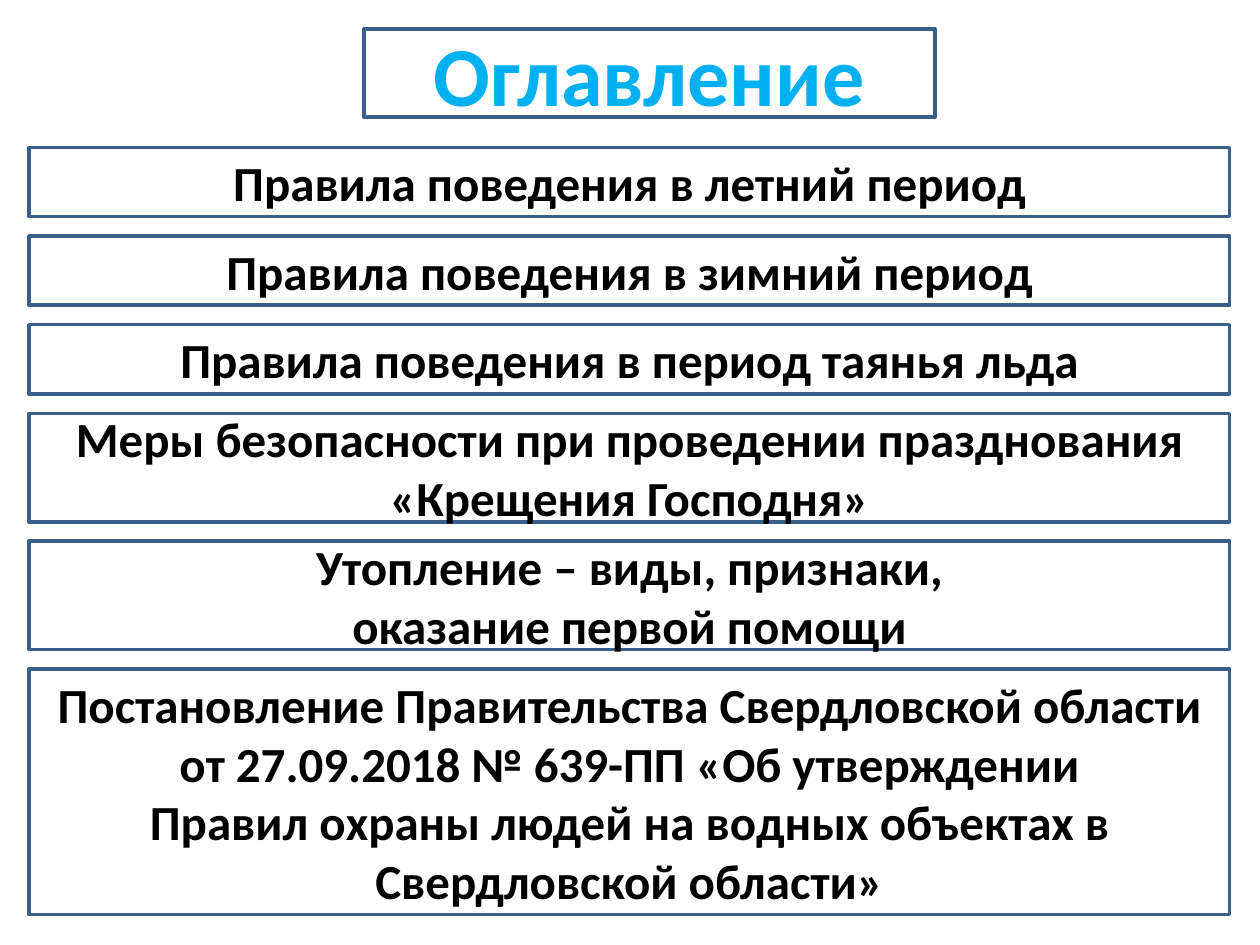
from pptx import Presentation
from pptx.dml.color import RGBColor
from pptx.enum.shapes import MSO_SHAPE
from pptx.enum.text import MSO_ANCHOR, PP_ALIGN
from pptx.util import Inches, Pt

RECTANGLE = MSO_SHAPE.RECTANGLE
MIDDLE = MSO_ANCHOR.MIDDLE
CENTER = PP_ALIGN.CENTER

WHITE = RGBColor(0xFF, 0xFF, 0xFF)
BLACK = RGBColor(0x00, 0x00, 0x00)
SKY_BLUE = RGBColor(0x00, 0xB0, 0xF0)
BORDER_BLUE = RGBColor(0x3A, 0x5F, 0x8C)

SLIDE_WIDTH, SLIDE_HEIGHT = Inches(10), Inches(7.5)
TITLE_BOX = (28.9, 3.07, 45.3, 9.33)
LIST_LEFT, LIST_WIDTH = 2.3, 95.3
LIST_TOP, LIST_BOTTOM = 15.6, 96.8
ONE_LINE, TWO_LINES, FOUR_LINES = 7.33, 11.47, 26

CONTENTS = [
    ("Правила поведения в летний период", ONE_LINE),
    ("Правила поведения в зимний период", ONE_LINE),
    ("Правила поведения в период таянья льда", ONE_LINE),
    ("Меры безопасности при проведении празднования «Крещения Господня»", TWO_LINES),
    ("Утопление – виды, признаки,\nоказание первой помощи", TWO_LINES),
    ("Постановление Правительства Свердловской области от 27.09.2018 № 639-ПП "
     "«Об утверждении\vПравил охраны людей на водных объектах в Свердловской области»",
     FOUR_LINES),
]


def add_box(slide, box, text, size, color):
    """Add a bordered box with bold centred text, placed in percent of the slide."""
    left, top, width, height = box
    shape = slide.shapes.add_shape(
        RECTANGLE,
        int(SLIDE_WIDTH * left / 100), int(SLIDE_HEIGHT * top / 100),
        int(SLIDE_WIDTH * width / 100), int(SLIDE_HEIGHT * height / 100))
    shape.shadow.inherit = False
    shape.line.color.rgb = BORDER_BLUE
    shape.line.width = Pt(2)
    shape.fill.background()
    text_frame = shape.text_frame
    text_frame.word_wrap = True
    text_frame.vertical_anchor = MIDDLE
    text_frame.text = text
    for paragraph in text_frame.paragraphs:
        paragraph.alignment = CENTER
        for run in paragraph.runs:
            run.font.name = "Calibri"
            run.font.size = Pt(size)
            run.font.bold = True
            run.font.color.rgb = color
    return shape


def add_contents(slide):
    """Stack the contents entries with equal gaps between them."""
    used = sum(height for _, height in CONTENTS)
    gap = (LIST_BOTTOM - LIST_TOP - used) / (len(CONTENTS) - 1)
    top = LIST_TOP
    for text, height in CONTENTS:
        add_box(slide, (LIST_LEFT, top, LIST_WIDTH, height), text, 28, BLACK)
        top += height + gap


def add_title(slide):
    """Add the white heading box."""
    title = add_box(slide, TITLE_BOX, "Оглавление", 48, SKY_BLUE)
    title.fill.solid()
    title.fill.fore_color.rgb = WHITE


def main():
    """Build and save the contents slide."""
    presentation = Presentation()
    presentation.slide_width = SLIDE_WIDTH
    presentation.slide_height = SLIDE_HEIGHT
    slide = presentation.slides.add_slide(presentation.slide_layouts[6])
    add_contents(slide)
    add_title(slide)
    presentation.save("out.pptx")


if __name__ == "__main__":
    main()
